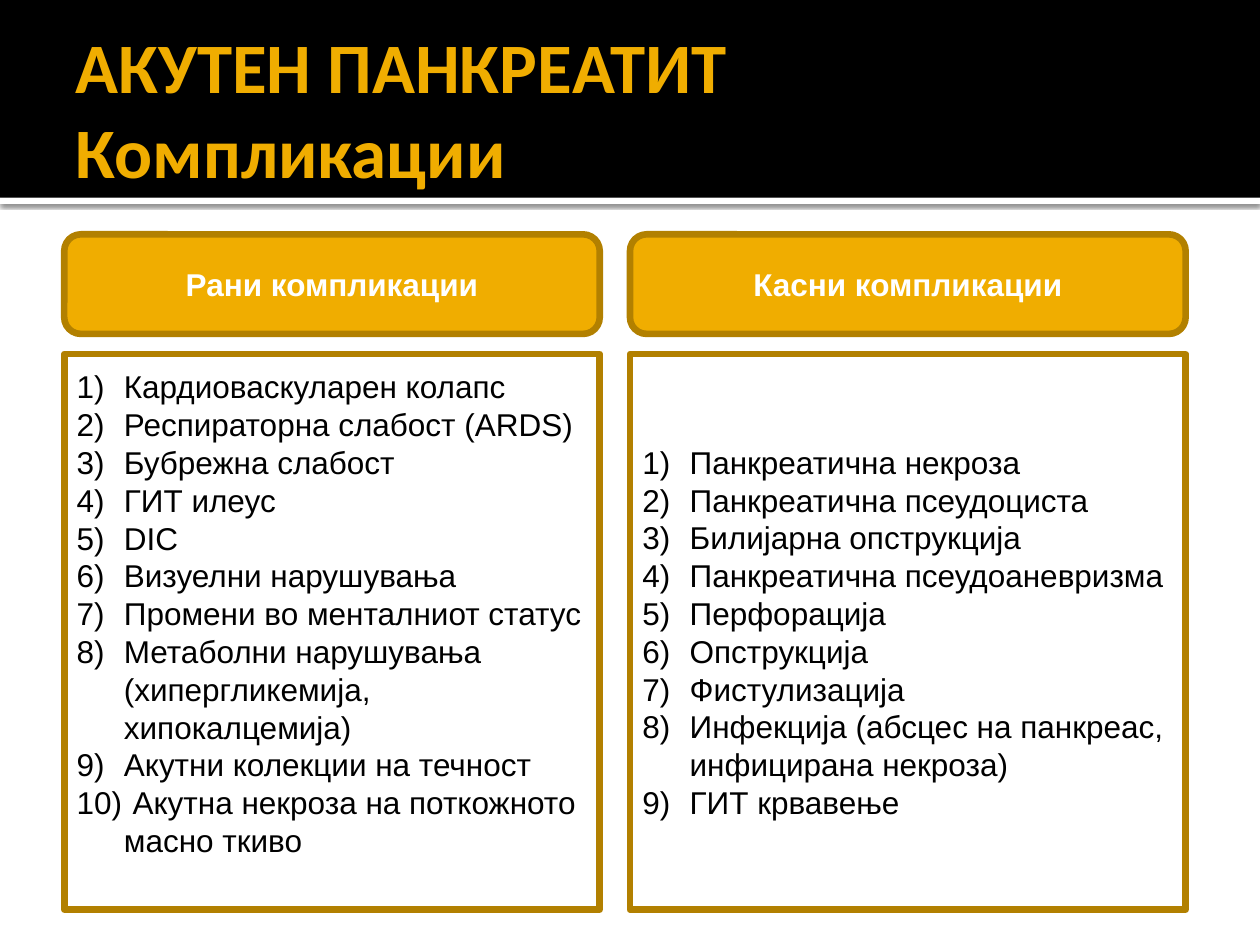
from lxml import etree
from pptx import Presentation
from pptx.dml.color import RGBColor
from pptx.enum.shapes import MSO_SHAPE
from pptx.enum.text import MSO_ANCHOR, MSO_AUTO_SIZE, PP_ALIGN
from pptx.oxml.ns import qn
from pptx.util import Pt

RECT = MSO_SHAPE.RECTANGLE
ROUND = MSO_SHAPE.ROUNDED_RECTANGLE
MIDDLE = MSO_ANCHOR.MIDDLE
LEFT, CENTER = PP_ALIGN.LEFT, PP_ALIGN.CENTER

BLACK = RGBColor(0x00, 0x00, 0x00)
WHITE = RGBColor(0xFF, 0xFF, 0xFF)
GOLD = RGBColor(0xF0, 0xAD, 0x00)
BROWN = RGBColor(0xB2, 0x80, 0x00)

EARLY = [
    "Кардиоваскуларен колапс",
    "Респираторна слабост (ARDS)",
    "Бубрежна слабост",
    "ГИТ илеус",
    "DIC",
    "Визуелни нарушувања",
    "Промени во менталниот статус",
    "Метаболни нарушувања (хипергликемија, хипокалцемија)",
    "Акутни колекции на течност",
    " Акутна некроза на поткожното масно ткиво",
]
LATE = [
    "Панкреатична некроза",
    "Панкреатична псеудоциста",
    "Билијарна опструкција",
    "Панкреатична псеудоаневризма",
    "Перфорација",
    "Опструкција",
    "Фистулизација",
    "Инфекција (абсцес на панкреас, инфицирана некроза)",
    "ГИТ крвавење",
]
# heading, items, left, width, bottom inset
COLUMNS = [
    ("Рани компликации", EARLY, 36.72, 306, 25),
    ("Касни компликации", LATE, 360, 317.52, 3.6),
]


def write(frame, lines, size=18, font="Arial", color=BLACK, bold=False,
          align=LEFT, number=False):
    """Fill the frame with one paragraph per line, numbered if asked."""
    frame.word_wrap = True
    frame.vertical_anchor = MIDDLE
    for i, line in enumerate(lines):
        para = frame.add_paragraph() if i else frame.paragraphs[0]
        para.text = line
        para.alignment = align
        for run in para.runs:
            run.font.size = Pt(size)
            run.font.name = font
            run.font.bold = bold
            run.font.color.rgb = color
        if number:
            props = para._p.get_or_add_pPr()
            props.set("marL", str(Pt(27)))
            props.set("indent", str(-Pt(27)))
            etree.SubElement(props, qn("a:buAutoNum"), type="arabicParenR")


class Deck:
    def __init__(self):
        self.prs = Presentation()
        self.prs.slide_width, self.prs.slide_height = Pt(720), Pt(540)
        self.slide = self.prs.slides.add_slide(self.prs.slide_layouts[5])

    def box(self, kind, x, y, w, h, fill, line=None):
        shape = self.slide.shapes.add_shape(kind, Pt(x), Pt(y), Pt(w), Pt(h))
        shape.shadow.inherit = False
        shape.fill.solid()
        shape.fill.fore_color.rgb = fill
        if line is None:
            shape.line.fill.background()
        else:
            shape.line.color.rgb = line
            shape.line.width = Pt(3.78)
        return shape

    def shade(self, shape):
        """Give the shape a soft shadow below it."""
        effects = shape._element.spPr.find(qn("a:effectLst"))
        outer = etree.SubElement(
            effects, qn("a:outerShdw"), blurRad=str(Pt(2.5)),
            dist=str(Pt(0.8)), dir="5400000", algn="tl", rotWithShape="0")
        color = etree.SubElement(outer, qn("a:srgbClr"), val=str(BLACK))
        etree.SubElement(color, qn("a:alpha"), val="60000")

    def title(self, text, x, y, w, h):
        title = self.slide.shapes.title
        title.left, title.top = Pt(x), Pt(y)
        title.width, title.height = Pt(w), Pt(h)
        frame = title.text_frame
        frame.auto_size = MSO_AUTO_SIZE.NONE
        frame.margin_left = Pt(7.2)
        frame.margin_right = frame.margin_top = frame.margin_bottom = Pt(3.6)
        write(frame, [text], size=40.5, font="Calibri", color=GOLD, bold=True)
        self.slide.shapes._spTree.append(title._element)

    def column(self, head, items, x, w, inset):
        top = self.box(ROUND, x, 133.92, w, 56.88, GOLD, BROWN)
        write(top.text_frame, [head], color=WHITE, bold=True, align=CENTER)
        body = self.box(RECT, x, 202.32, w, 317.52, WHITE, BROWN)
        body.text_frame.margin_bottom = Pt(inset)
        write(body.text_frame, items, number=True)


def main():
    deck = Deck()
    deck.shade(deck.box(RECT, 0, 113, 720, 3.6, WHITE))
    deck.box(RECT, 0, 0, 720, 113, BLACK)
    deck.title("АКУТЕН ПАНКРЕАТИТ\vКомпликации", 36, 12.24, 648, 98.64)
    for column in COLUMNS:
        deck.column(*column)
    deck.prs.save("out.pptx")


if __name__ == "__main__":
    main()
